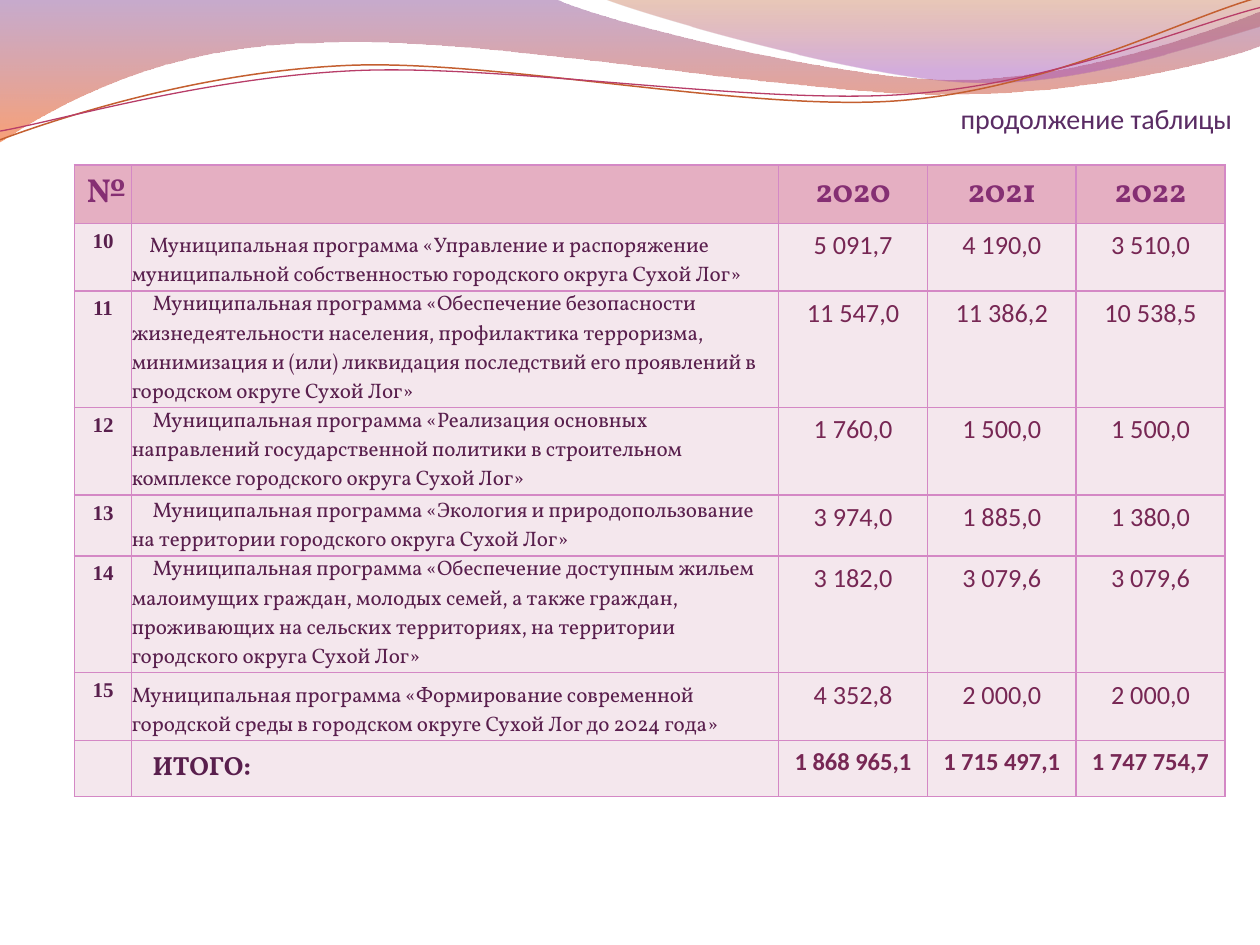
from dataclasses import dataclass
from typing import Any, NamedTuple

from lxml import etree
from pptx import Presentation
from pptx.dml.color import RGBColor
from pptx.enum.text import MSO_ANCHOR, PP_ALIGN
from pptx.oxml.ns import qn
from pptx.util import Pt

TOP, MIDDLE, BOTTOM = MSO_ANCHOR.TOP, MSO_ANCHOR.MIDDLE, MSO_ANCHOR.BOTTOM
LEFT, CENTER, RIGHT = PP_ALIGN.LEFT, PP_ALIGN.CENTER, PP_ALIGN.RIGHT


def face(name: str, size: float, color: str, bold: bool = False) -> dict[str, Any]:
    return {"name": name, "size": Pt(size), "bold": bold, "color": color}


@dataclass(frozen=True)
class Theme:
    head_fill = "E5AFC2"
    body_fill = "F4E7ED"
    border = "D488C5"
    title = face("Calibri", 16, "5A2C64")
    head = face("Vollkorn", 19, "852F73", True)
    number = face("Times New Roman", 12, "591F4D", True)
    name = face("Vollkorn", 12, "591F4D")
    value = face("Calibri", 15, "772754")
    total = face("Vollkorn", 15, "591F4D", True)
    sum = face("Calibri", 14, "772754", True)


class Stop(NamedTuple):
    place: float
    color: str
    alpha: int


class Wave(NamedTuple):
    """Each leg holds one point (straight) or three points (cubic curve)."""
    start: tuple
    legs: list
    stops: tuple = ()
    color: str = ""
    width: float = 0


class Row(NamedTuple):
    height: float
    number: str
    name: str
    values: tuple
    indent: float = 12


THEME = Theme()
COLS = [32.8, 369.7, 85, 85, 85]
HEAD = Row(32.6, "№", "", ("2020", "2021", "2022"))
TOTAL = Row(32, "", "ИТОГО:", ("1 868 965,1", "1 715 497,1", "1 747 754,7"))
ROWS = [
    Row(38.4, "10", "Муниципальная программа «Управление и распоряжение "
        "муниципальной собственностью городского округа Сухой Лог»",
        ("5 091,7", "4 190,0", "3 510,0"), 10),
    Row(66.5, "11", "Муниципальная программа «Обеспечение безопасности "
        "жизнедеятельности населения, профилактика терроризма, минимизация и (или) "
        "ликвидация последствий его проявлений в городском округе Сухой Лог»",
        ("11 547,0", "11 386,2", "10 538,5")),
    Row(50, "12", "Муниципальная программа «Реализация основных направлений "
        "государственной политики в строительном комплексе городского округа Сухой Лог»",
        ("1 760,0", "1 500,0", "1 500,0")),
    Row(34.8, "13", "Муниципальная программа «Экология и природопользование "
        "на территории городского округа Сухой Лог»",
        ("3 974,0", "1 885,0", "1 380,0")),
    Row(66.5, "14", "Муниципальная программа «Обеспечение доступным жильем "
        "малоимущих граждан, молодых семей, а также граждан, проживающих на сельских "
        "территориях, на территории\nгородского округа Сухой Лог»",
        ("3 182,0", "3 079,6", "3 079,6")),
    Row(38.8, "15", "Муниципальная программа «Формирование современной "
        "городской среды в городском округе Сухой Лог до 2024 года»",
        ("4 352,8", "2 000,0", "2 000,0"), 0),
]
WAVES = [
    Wave((0, -0.7), [[(317, -0.7)], [(343, 12), (478, 45.4), (546, 45.4)],
                     [(614, 45.4), (690, 18.7), (720, 6.5)], [(720.7, 26)],
                     [(708, 31.7), (626, 54.7), (537, 54)],
                     [(448, 54), (275, 20.2), (185, 24.5)],
                     [(93, 25.2), (33, 59.8), (-0.7, 81.4)]],
         stops=(Stop(0, "834591", 45), Stop(1, "F35307", 55))),
    Wave((345, -0.7), [[(366, 8), (491, 44.6), (554, 46.8)],
                       [(616, 49.7), (692, 23), (720, 15)], [(720, 0)]],
         stops=(Stop(0, "B74915", 30), Stop(0.8, "A14BB4", 45))),
    Wave((0, 79.9), [[(35, 67), (114, 41), (199, 37.4)],
                     [(284, 33.8), (427, 64), (513, 57.6)],
                     [(600, 51), (675, 10.8), (719, -1.4)]],
         color="C45F30", width=0.85),
    Wave((0, 74.9), [[(34, 69), (118, 44), (204, 40.3)],
                     [(290, 36.7), (430, 59.8), (516, 54)],
                     [(602, 48.2), (678, 15), (720, 4.3)]],
         color="B83D68", width=0.75),
]


def bend(shape: Any, legs: list) -> None:
    """Join the three line segments of each curved leg into one cubic curve."""
    lines = iter(list(shape.element.spPr.iter(qn("a:lnTo"))))
    for leg in legs:
        parts = [next(lines) for _ in leg]
        if len(parts) == 3:
            curve = etree.Element(qn("a:cubicBezTo"))
            parts[0].addprevious(curve)
            for part in parts:
                curve.append(part[0])
                part.getparent().remove(part)


def draw_wave(slide: Any, wave: Wave) -> None:
    pen = slide.shapes.build_freeform(*map(Pt, wave.start))
    pts = [(Pt(x), Pt(y)) for leg in wave.legs for x, y in leg]
    pen.add_line_segments(pts, close=bool(wave.stops))
    shape = pen.convert_to_shape()
    bend(shape, wave.legs)
    shape.shadow.inherit = False
    if not wave.stops:
        shape.fill.background()
        shape.line.color.rgb = RGBColor.from_string(wave.color)
        shape.line.width = Pt(wave.width)
        return
    shape.line.fill.background()
    shape.fill.gradient()
    shape.fill.gradient_angle = 270
    for mark, stop in zip(shape.fill.gradient_stops, wave.stops):
        mark.position = stop.place
        mark.color.rgb = RGBColor.from_string(stop.color)
    tints = shape.element.spPr.iter(qn("a:srgbClr"))
    for tint, stop in zip(list(tints), wave.stops):
        etree.SubElement(tint, qn("a:alpha"), val=str(stop.alpha * 1000))


def write(frame: Any, text: str, style: dict, align: Any, indent: float = 0) -> None:
    """Fill a text frame; only the first paragraph is indented."""
    frame.text = text
    for para in frame.paragraphs:
        para.alignment = align
        for run in para.runs:
            for key, val in style.items():
                if key == "color":
                    run.font.color.rgb = RGBColor.from_string(val)
                else:
                    setattr(run.font, key, val)
    if indent:
        props = frame.paragraphs[0]._p.get_or_add_pPr()
        props.set("marL", "0")
        props.set("indent", str(Pt(indent)))


def paint(cell: Any, color: str) -> None:
    """Draw the cell's four borders, then its fill."""
    props = cell._tc.get_or_add_tcPr()
    for side in "LRTB":
        line = etree.SubElement(props, qn(f"a:ln{side}"), w=str(Pt(1)))
        fill = etree.SubElement(line, qn("a:solidFill"))
        etree.SubElement(fill, qn("a:srgbClr"), val=THEME.border)
    cell.fill.solid()
    cell.fill.fore_color.rgb = RGBColor.from_string(color)


def draw_row(cells: Any, row: Row, fill: str, styles: tuple, anchor: Any) -> None:
    first, middle, last = styles
    for cell in cells:
        paint(cell, fill)
    if row.number:
        write(cells[0].text_frame, row.number, first, CENTER)
    if row.name:
        write(cells[1].text_frame, row.name, middle, LEFT, row.indent)
        cells[1].vertical_anchor = anchor
        for side in ("left", "top", "right", "bottom"):
            setattr(cells[1], f"margin_{side}", 0)
    for cell, value in zip(cells[2:], row.values):
        write(cell.text_frame, value, last, CENTER)


def draw_table(slide: Any) -> None:
    rows = [HEAD, *ROWS, TOTAL]
    table = slide.shapes.add_table(len(rows), len(COLS), Pt(42.5), Pt(94.2),
                                   Pt(sum(COLS)), Pt(sum(r.height for r in rows))).table
    table.horz_banding = False
    for col, width in zip(table.columns, COLS):
        col.width = Pt(width)
    head = (THEME.head_fill, (THEME.head,) * 3, TOP)
    body = (THEME.body_fill, (THEME.number, THEME.name, THEME.value), BOTTOM)
    total = (THEME.body_fill, (THEME.number, THEME.total, THEME.sum), MIDDLE)
    looks = [head, *[body] * len(ROWS), total]
    for line, row, look in zip(table.rows, rows, looks):
        line.height = Pt(row.height)
        draw_row(list(line.cells), row, *look)


def draw_title(slide: Any) -> None:
    title = slide.shapes.title
    box = {"left": 50.4, "top": 32.4, "width": 653.8, "height": 44.6}
    for key, val in box.items():
        setattr(title, key, Pt(val))
    frame = title.text_frame
    form = {"margin_left": 0, "margin_top": Pt(3.6), "margin_right": 0,
            "margin_bottom": 0, "vertical_anchor": BOTTOM, "word_wrap": True}
    for key, val in form.items():
        setattr(frame, key, val)
    write(frame, "продолжение таблицы", THEME.title, RIGHT)
    slide.shapes.element.append(title.element)


def main() -> None:
    deck = Presentation()
    deck.slide_width, deck.slide_height = Pt(720), Pt(540)
    slide = deck.slides.add_slide(deck.slide_layouts[5])
    for wave in WAVES:
        draw_wave(slide, wave)
    draw_table(slide)
    draw_title(slide)
    deck.save("out.pptx")


if __name__ == "__main__":
    main()
